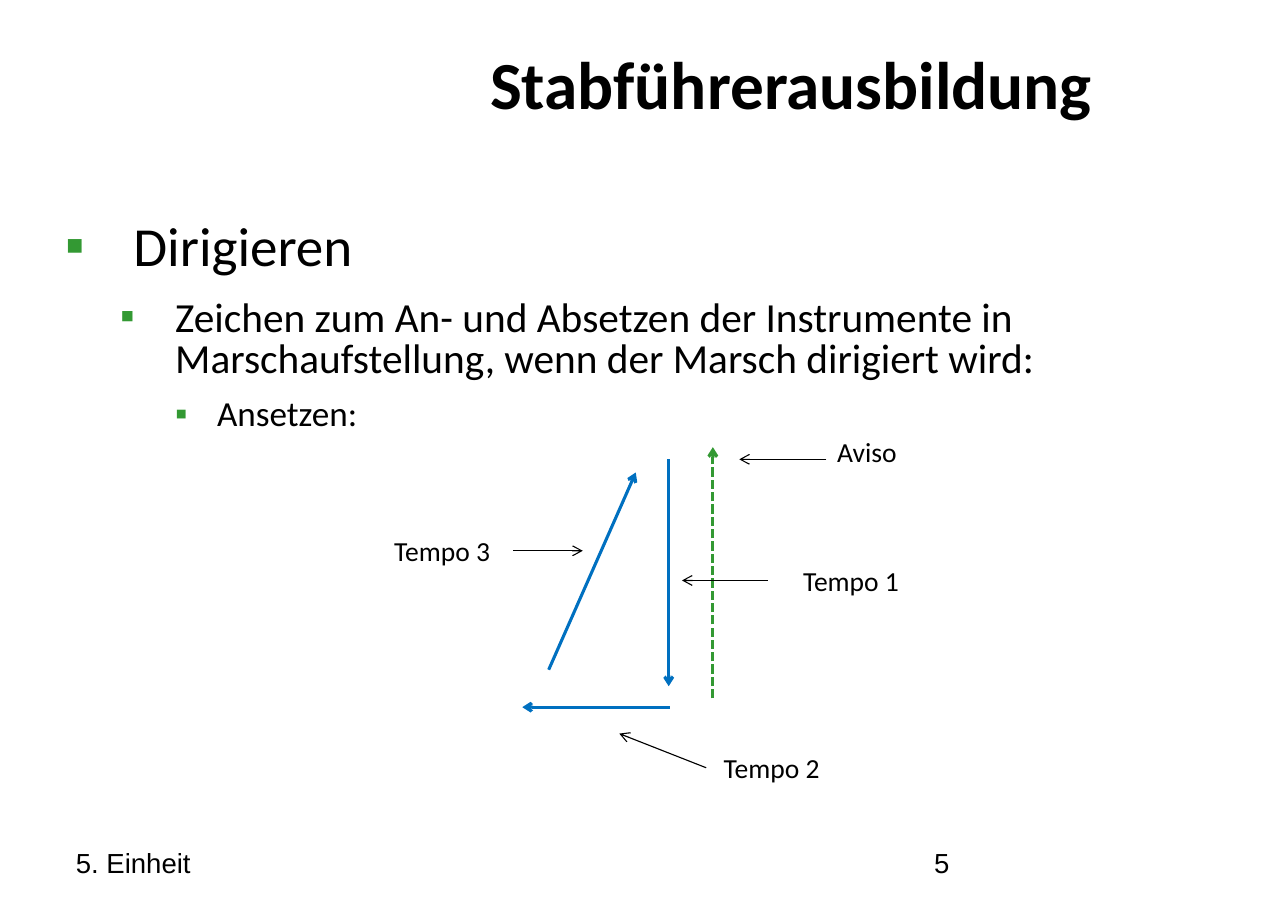
import pptx
import pptx.dml.color
import pptx.enum.dml
import pptx.enum.shapes
import pptx.enum.text
import pptx.oxml.ns
import pptx.util
from lxml import etree

WIDE, HIGH = 11.69, 8.27
COLORS = {"ink": "000000", "green": "339933", "blue": "0070C0"}
LABEL = 4.84
FOOT = 92.62


def across(share):
    return pptx.util.Inches(WIDE * share / 100)


def down(share):
    return pptx.util.Inches(HIGH * share / 100)


def color(name):
    return pptx.dml.color.RGBColor.from_string(COLORS[name])


def add_tag(parent, tag, **values):
    return etree.SubElement(parent, pptx.oxml.ns.qn(tag), values)


def add_box(slide, left, top, width, height, insets=(0.1, 0.05, 0.1, 0.05)):
    box = slide.shapes.add_textbox(across(left), down(top), across(width), down(height))
    frame = box.text_frame
    frame.word_wrap = True
    sides = [pptx.util.Inches(inset) for inset in insets]
    frame.margin_left, frame.margin_top, frame.margin_right, frame.margin_bottom = sides
    return box


def add_run(par, text, size, face="Calibri", bold=False):
    run = par.add_run()
    run.text = text
    run.font.size = pptx.util.Pt(size)
    run.font.name = face
    run.font.bold = bold
    run.font.color.rgb = color("ink")


def add_title(slide, text):
    box = add_box(slide, 27.8, 5.2, 67.32, 17.17, (0, 0.08, 0, 0))
    par = box.text_frame.paragraphs[0]
    par.alignment = pptx.enum.text.PP_ALIGN.CENTER
    par.line_spacing = 0.83
    add_run(par, text, 44, bold=True)


def add_bullet(par, margin, hang):
    props = par._p.get_or_add_pPr()
    props.set("marL", str(pptx.util.Inches(margin)))
    props.set("indent", str(-pptx.util.Inches(hang)))
    add_tag(add_tag(props, "a:buClr"), "a:srgbClr", val=COLORS["green"])
    add_tag(props, "a:buFont", typeface="Arial")
    add_tag(props, "a:buChar", char="▪")


def add_list(slide, items):
    frame = add_box(slide, 5.05, 23.46, 89.91, 65.9, (0, 0.08, 0, 0)).text_frame
    for level, (text, size, margin, hang, after) in enumerate(items):
        par = frame.add_paragraph() if level else frame.paragraphs[0]
        par.level = level
        par.line_spacing = 0.83
        par.space_after = pptx.util.Pt(after)
        add_bullet(par, margin, hang)
        add_run(par, text, size)


def add_foot(slide, left, text):
    par = add_box(slide, left, FOOT, 23.27, 5.2).text_frame.paragraphs[0]
    par.line_spacing = 0.93
    add_run(par, text, 18, "Arial")


def add_label(slide, text, left, top, width):
    box = add_box(slide, left, top, width, LABEL)
    box.text_frame.auto_size = pptx.enum.text.MSO_AUTO_SIZE.SHAPE_TO_FIT_TEXT
    add_run(box.text_frame.paragraphs[0], text, 18)
    return box


def add_arrow(slide, start, end, tint="ink", weight=0.75, dashed=False):
    arrow = slide.shapes.add_connector(
        pptx.enum.shapes.MSO_CONNECTOR.STRAIGHT,
        across(start[0]), down(start[1]), across(end[0]), down(end[1]))
    arrow.line.color.rgb = color(tint)
    arrow.line.width = pptx.util.Pt(weight)
    if dashed:
        arrow.line.dash_style = pptx.enum.dml.MSO_LINE.SQUARE_DOT
    props = arrow._element.spPr
    add_tag(props.find(pptx.oxml.ns.qn("a:ln")), "a:tailEnd", type="arrow")
    add_tag(props, "a:effectLst")
    return arrow


def add_beats(slide):
    add_arrow(slide, (55.35, 76.66), (55.35, 49.09), "green", 2, dashed=True)
    for start, end in (
        ((52.01, 77.63), (40.55, 77.63)),
        ((42.6, 73.52), (49.36, 51.87)),
        ((51.92, 50.42), (51.92, 75.33)),
    ):
        add_arrow(slide, start, end, "blue", 2)


def add_notes(slide):
    for text, left, top, width, start, end, joined in (
        ("Aviso", 64.16, 47.16, 8.04, (64.16, 50.42), (57.4, 50.42), False),
        ("Tempo 1", 61.51, 61.31, 10.78, (59.62, 63.72), (52.95, 63.72), False),
        ("Tempo 2", 55.35, 81.86, 10.09, (54.83, 84.28), (48.08, 80.53), False),
        ("Tempo 3", 29.77, 58.04, 10.09, (39.86, 60.46), (45.25, 60.46), True),
    ):
        label = add_label(slide, text, left, top, width)
        arrow = add_arrow(slide, start, end)
        if joined:
            arrow.begin_connect(label, 3)


def main():
    deck = pptx.Presentation()
    deck.slide_width = pptx.util.Inches(WIDE)
    deck.slide_height = pptx.util.Inches(HIGH)
    slide = deck.slides.add_slide(deck.slide_layouts[6])
    add_title(slide, "Stabführerausbildung")
    add_list(slide, (
        ("Dirigieren", 36, 0.62, 0.62, 14.2),
        ("Zeichen zum An- und Absetzen der Instrumente in "
         "Marschaufstellung, wenn der Marsch dirigiert wird:", 27, 1, 0.5, 11.4),
        ("Ansetzen:", 23, 1.38, 0.38, 8.5),
    ))
    add_foot(slide, 5.05, "5. Einheit")
    add_foot(slide, 71.69, "5")
    add_beats(slide)
    add_notes(slide)
    deck.save("out.pptx")


if __name__ == "__main__":
    main()
